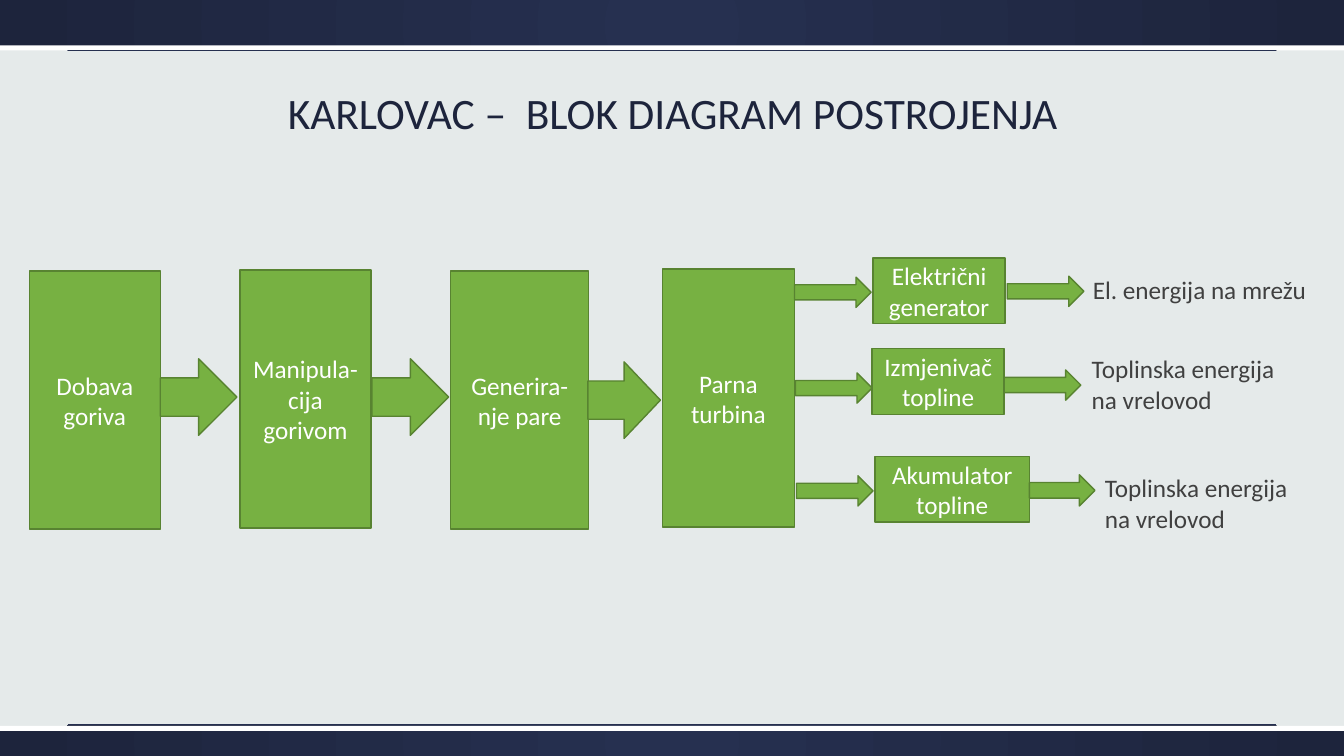
import pptx
import pptx.util
import pptx.dml.color
import pptx.enum.shapes
import pptx.enum.text
import pptx.oxml
import pptx.oxml.ns
from lxml import etree

RGB = pptx.dml.color.RGBColor
SHAPE = pptx.enum.shapes.MSO_SHAPE
ALIGN = pptx.enum.text.PP_ALIGN
ANCHOR = pptx.enum.text.MSO_ANCHOR
SIZING = pptx.enum.text.MSO_AUTO_SIZE

SCALE = 9144  # EMU per px, 100 px to the inch
WIDTH, HEIGHT = 1333, 750
FONT = "Calibri"

PALE = RGB(0xE5, 0xEA, 0xEA)
NAVY = RGB(0x1D, 0x24, 0x3C)
BLUE = RGB(0x26, 0x30, 0x50)
WHITE = RGB(0xFF, 0xFF, 0xFF)
GREEN = RGB(0x77, 0xB1, 0x42)
MOSS = RGB(0x58, 0x83, 0x31)
GREY = RGB(0x40, 0x40, 0x40)

# left, top, width, height, text
BLOCKS = [
    (29, 269, 130, 256, "Dobava goriva"),
    (238, 268, 130, 256, "Manipula-cija gorivom"),
    (447, 269, 137, 256, "Generira-nje pare"),
    (657, 267, 131, 256, "Parna turbina"),
    (866, 256, 131, 65, "Električni generator"),
    (865, 346, 131, 65, "Izmjenivač topline"),
    (868, 453, 153, 65, "Akumulator topline"),
]
ARROWS = [
    (159, 356, 76, 76), (369, 356, 76, 76), (583, 359, 72, 76),
    (788, 275, 76, 30), (789, 370, 76, 30), (790, 472, 76, 30),
    (999, 274, 76, 30), (996, 367, 76, 30), (1021, 471, 65, 31),
]
# left, top, width, height, text, wrap
LABELS = [
    (1074, 267, 238, 40, "El. energija na mrežu", False),
    (1073, 346, 224, 71, "Toplinska energija na vrelovod", True),
    (1086, 464, 227, 71, "Toplinska energija na vrelovod", True),
]


def px(*sizes):
    return [size * SCALE for size in sizes]


def write(frame, text, size, color, align):
    line = frame.paragraphs[0]
    line.alignment = align
    run = line.add_run()
    run.text = text
    run.font.name = FONT
    run.font.size = pptx.util.Pt(size)
    run.font.color.rgb = color
    return line


def add_form(slide, kind, place, fill, edge=None):
    form = slide.shapes.add_shape(kind, *px(*place))
    form.shadow.inherit = False
    form.fill.solid()
    form.fill.fore_color.rgb = fill
    if edge is None:
        form.line.fill.background()
    else:
        form.line.color.rgb = edge
        form.line.width = pptx.util.Pt(1)
    return form


def add_glow(form):
    """Replace the solid fill by a gradient that spreads from the centre."""
    glow = pptx.oxml.parse_xml(
        f'<a:gradFill {pptx.oxml.ns.nsdecls("a")} rotWithShape="1"><a:gsLst>'
        f'<a:gs pos="0"><a:srgbClr val="{BLUE}"/></a:gs>'
        f'<a:gs pos="100000"><a:srgbClr val="{NAVY}"/></a:gs></a:gsLst>'
        '<a:path path="circle"><a:fillToRect l="50000" t="50000" r="50000" b="50000"/>'
        '</a:path></a:gradFill>')
    props = form.element.spPr
    props.replace(props.find(pptx.oxml.ns.qn("a:solidFill")), glow)


def add_band(slide, top, height, stripe, rule):
    band = add_form(slide, SHAPE.RECTANGLE, (0, top, WIDTH, height), NAVY)
    add_glow(band)
    add_form(slide, SHAPE.RECTANGLE, (0, stripe, WIDTH, 5), WHITE)
    line = slide.shapes.add_connector(
        pptx.enum.shapes.MSO_CONNECTOR.STRAIGHT, *px(67, rule, WIDTH - 67, rule))
    line.line.color.rgb = BLUE
    line.line.width = pptx.util.Pt(0.5)
    etree.SubElement(line.element.spPr, pptx.oxml.ns.qn("a:effectLst"))


def set_title(slide, text):
    title = slide.shapes.title
    title.left, title.top, title.width, title.height = px(167, 59, 1000, 84)
    frame = title.text_frame
    frame.auto_size = SIZING.NONE
    frame.vertical_anchor = ANCHOR.BOTTOM
    write(frame, text, 31, NAVY, ALIGN.CENTER).line_spacing = 0.9


def add_block(slide, *place, text):
    block = add_form(slide, SHAPE.RECTANGLE, place, GREEN, MOSS)
    block.text_frame.word_wrap = True
    block.text_frame.vertical_anchor = ANCHOR.MIDDLE
    write(block.text_frame, text, 18, WHITE, ALIGN.CENTER)


def add_label(slide, *place, text, wrap):
    frame = slide.shapes.add_textbox(*px(*place)).text_frame
    frame.word_wrap = wrap
    frame.auto_size = SIZING.SHAPE_TO_FIT_TEXT
    write(frame, text, 18, GREY, ALIGN.LEFT)


def main():
    deck = pptx.Presentation()
    deck.slide_width, deck.slide_height = px(WIDTH, HEIGHT)
    slide = deck.slides.add_slide(deck.slide_layouts[5])
    slide.background.fill.solid()
    slide.background.fill.fore_color.rgb = PALE
    add_band(slide, 720, 30, stripe=720, rule=719)
    add_band(slide, 0, 50, stripe=45, rule=50)
    set_title(slide, "KARLOVAC –  BLOK DIAGRAM POSTROJENJA")
    for *place, text in BLOCKS:
        add_block(slide, *place, text=text)
    for place in ARROWS:
        add_form(slide, SHAPE.RIGHT_ARROW, place, GREEN, MOSS)
    for *place, text, wrap in LABELS:
        add_label(slide, *place, text=text, wrap=wrap)
    deck.save("out.pptx")


if __name__ == "__main__":
    main()
